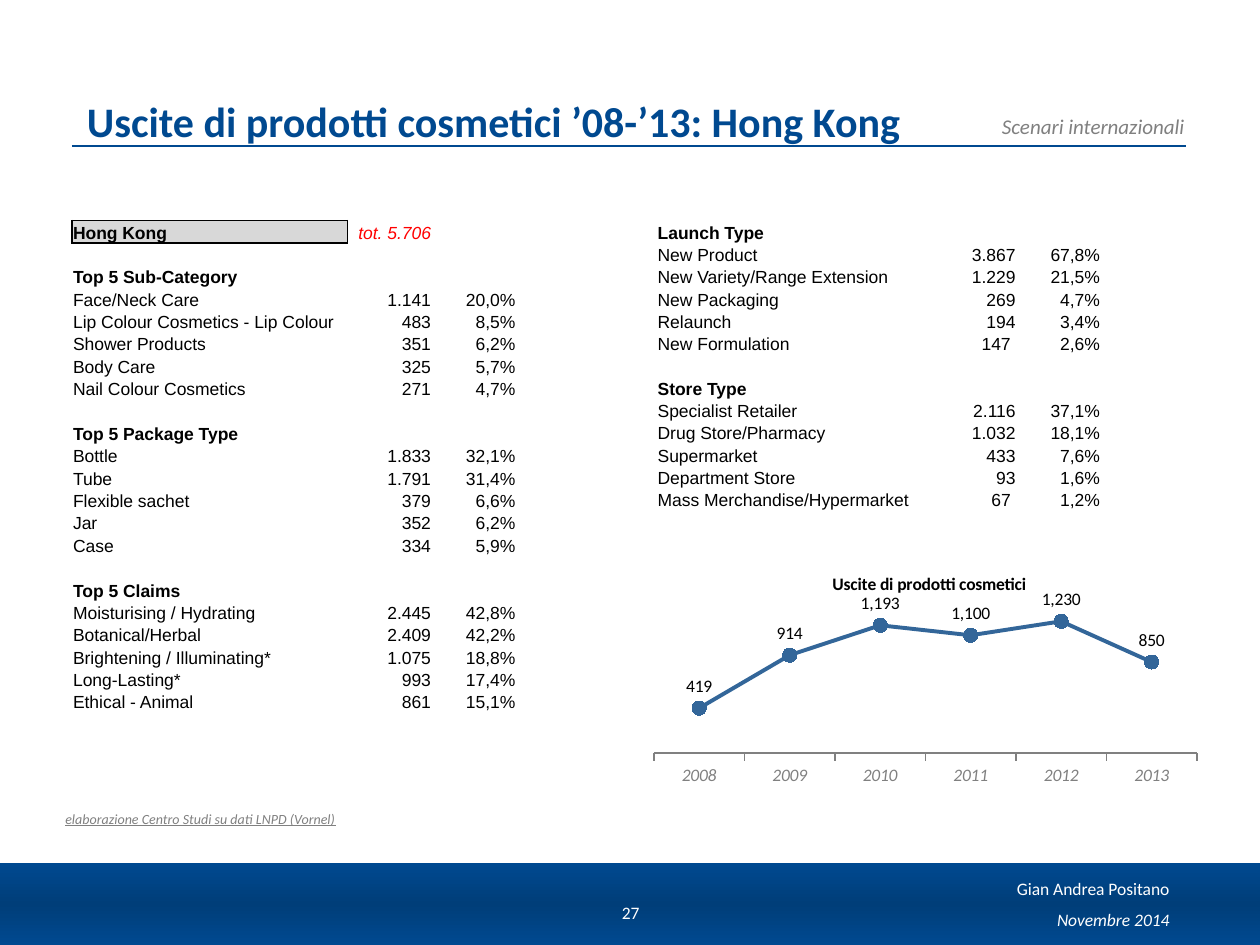
"""Build the Hong Kong cosmetics launches slide."""
from copy import deepcopy
from dataclasses import dataclass

from lxml import etree
from pptx import Presentation
from pptx.chart.data import CategoryChartData
from pptx.dml.color import RGBColor
from pptx.enum.chart import XL_CHART_TYPE, XL_LABEL_POSITION, XL_MARKER_STYLE, XL_TICK_MARK
from pptx.enum.shapes import MSO_CONNECTOR, MSO_SHAPE
from pptx.enum.text import MSO_ANCHOR, MSO_AUTO_SIZE, PP_ALIGN
from pptx.oxml.ns import qn
from pptx.util import Inches, Pt

LEFT, CENTER, RIGHT = PP_ALIGN.LEFT, PP_ALIGN.CENTER, PP_ALIGN.RIGHT
TOP, MIDDLE, BOTTOM = MSO_ANCHOR.TOP, MSO_ANCHOR.MIDDLE, MSO_ANCHOR.BOTTOM
LINE_CHART = XL_CHART_TYPE.LINE_MARKERS_STACKED
ABOVE, CIRCLE, OUTSIDE = XL_LABEL_POSITION.ABOVE, XL_MARKER_STYLE.CIRCLE, XL_TICK_MARK.OUTSIDE
NO_STYLE = "{2D5ABB26-0587-4C30-8999-92F81FD0307C}"


@dataclass(frozen=True)
class Theme:
    """Fonts, colours and type sizes."""
    font: str = "Calibri"
    table_font: str = "Arial"
    blue: str = "004990"
    deep_blue: str = "003E79"
    series: str = "336699"
    grey: str = "808080"
    cell: str = "D8D8D8"
    red: str = "FF0000"
    black: str = "000000"
    white: str = "FFFFFF"
    title: int = 24
    tag: int = 12
    body: int = 10
    note: int = 8


@dataclass(frozen=True)
class Section:
    """A headed group of table rows."""
    heading: str
    rows: tuple


T = Theme()
COLUMNS = (2.19, 0.67, 0.67)
LEFT_SECTIONS = (
    Section("Top 5 Sub-Category", (
        ("Face/Neck Care", "1.141", "20,0%"),
        ("Lip Colour Cosmetics - Lip Colour", "483", "8,5%"),
        ("Shower Products", "351", "6,2%"),
        ("Body Care", "325", "5,7%"),
        ("Nail Colour Cosmetics", "271", "4,7%"))),
    Section("Top 5 Package Type", (
        ("Bottle", "1.833", "32,1%"),
        ("Tube", "1.791", "31,4%"),
        ("Flexible sachet", "379", "6,6%"),
        ("Jar", "352", "6,2%"),
        ("Case", "334", "5,9%"))),
    Section("Top 5 Claims", (
        ("Moisturising / Hydrating", "2.445", "42,8%"),
        ("Botanical/Herbal", "2.409", "42,2%"),
        ("Brightening / Illuminating*", "1.075", "18,8%"),
        ("Long-Lasting*", "993", "17,4%"),
        ("Ethical - Animal", "861", "15,1%"))),
)
RIGHT_SECTIONS = (
    Section("Launch Type", (
        ("New Product", "3.867", "67,8%"),
        ("New Variety/Range Extension", "1.229", "21,5%"),
        ("New Packaging", "269", "4,7%"),
        ("Relaunch", "194", "3,4%"),
        ("New Formulation", "147 ", "2,6%"))),
    Section("Store Type", (
        ("Specialist Retailer", "2.116", "37,1%"),
        ("Drug Store/Pharmacy", "1.032", "18,1%"),
        ("Supermarket", "433", "7,6%"),
        ("Department Store", "93", "1,6%"),
        ("Mass Merchandise/Hypermarket", "67 ", "1,2%"))),
)


def rgb(color: str) -> RGBColor:
    """Turn a hex string into a colour."""
    return RGBColor.from_string(color)


def style(font, size=T.body, color=T.black, name=T.font, bold=False, italic=False, underline=False):
    """Format a font."""
    font.name, font.size, font.color.rgb = name, Pt(size), rgb(color)
    font.bold, font.italic, font.underline = bold, italic, underline


def write(tf, text: str, align=LEFT, spacing=None, **fmt) -> None:
    """Write one formatted paragraph into a text frame."""
    p = tf.paragraphs[0]
    p.alignment = align
    if spacing:
        p.line_spacing = spacing
    r = p.add_run()
    r.text = text
    style(r.font, **fmt)


def add_text(s, text: str, box: tuple, anchor=TOP, **fmt) -> None:
    """Add a wrapped text box."""
    tf = s.shapes.add_textbox(*map(Inches, box)).text_frame
    tf.word_wrap, tf.vertical_anchor = True, anchor
    write(tf, text, **fmt)


def add_frame(s) -> None:
    """Draw the title rule and the footer band."""
    rule = s.shapes.add_connector(MSO_CONNECTOR.STRAIGHT, *map(Inches, (0.57, 1.16, 9.41, 1.16)))
    rule.line.color.rgb, rule.line.width = rgb(T.blue), Pt(0.75)
    etree.SubElement(rule._element.spPr, qn("a:effectLst"))
    band = s.shapes.add_shape(MSO_SHAPE.RECTANGLE, *map(Inches, (-0.19, 6.85, 10.3, 0.65)))
    band.shadow.inherit = False
    band.line.fill.background()
    band.fill.gradient()
    band.fill.gradient_angle = 90
    stops = band._element.spPr.find(qn("a:gradFill")).find(qn("a:gsLst"))
    stops.insert(1, deepcopy(stops[0]))
    for stop, pos, color in zip(band.fill.gradient_stops, (0, 0.5, 1), (T.blue, T.deep_blue, T.blue)):
        stop.position, stop.color.rgb = pos, rgb(color)


def section_rows(sections: tuple) -> list:
    """List the table rows, with an empty row between sections."""
    rows = []
    for section in sections:
        rows += [("", "", "")] if rows else []
        rows += [(section.heading, "", ""), *section.rows]
    return rows


def add_border(cell, sides: str) -> None:
    """Draw a black line on the given sides of a cell."""
    for side in sides:
        ln = etree.SubElement(cell._tc.get_or_add_tcPr(), qn(f"a:ln{side}"), w=str(Pt(1)))
        fill = etree.SubElement(ln, qn("a:solidFill"))
        etree.SubElement(fill, qn("a:srgbClr"), val=T.black)


def add_rows(s, rows: list, box: tuple):
    """Add a plain table with bold headings."""
    tbl = s.shapes.add_table(len(rows), len(COLUMNS), *map(Inches, box)).table
    tbl.first_row = tbl.horz_banding = False
    tbl._tbl.tblPr.find(qn("a:tableStyleId")).text = NO_STYLE
    for column, width in zip(tbl.columns, COLUMNS):
        column.width = Inches(width)
    for i, row in enumerate(rows):
        tbl.rows[i].height = Inches(box[3] / len(rows))
        for j, text in enumerate(row):
            cell = tbl.cell(i, j)
            cell.margin_left = cell.margin_right = cell.margin_top = Inches(0.01)
            cell.margin_bottom, cell.vertical_anchor = 0, BOTTOM
            total = text.startswith("tot.")
            if text:
                write(cell.text_frame, text, align=RIGHT if j else LEFT, name=T.table_font,
                      bold=not j and not row[2], italic=total, color=T.red if total else T.black)
            else:
                etree.SubElement(cell.text_frame.paragraphs[0]._p, qn("a:endParaRPr"), sz=str(T.body * 100))
            if (i, text) == (0, "Hong Kong"):
                add_border(cell, "LRTB")
                cell.fill.solid()
                cell.fill.fore_color.rgb = rgb(T.cell)
            else:
                cell.fill.background()


def set_layout(parent, inner=False, **place: float) -> None:
    """Place a chart part by fractions of the chart area."""
    layout = parent.find(qn("c:layout"))
    if layout is None:
        layout = etree.Element(qn("c:layout"))
        parent.insert(0, layout)
    manual = etree.SubElement(layout, qn("c:manualLayout"))
    if inner:
        etree.SubElement(manual, qn("c:layoutTarget"), val="inner")
    for mode in ("xMode", "yMode"):
        etree.SubElement(manual, qn(f"c:{mode}"), val="edge")
    for key, value in place.items():
        etree.SubElement(manual, qn(f"c:{key}"), val=str(value))


def add_launch_chart(s) -> None:
    """Add the line chart of launches by year."""
    data = CategoryChartData(number_format="#,##0")
    data.categories = [str(year) for year in range(2008, 2014)]
    data.add_series("Series 1", (419, 914, 1193, 1100, 1230, 850))
    chart = s.shapes.add_chart(LINE_CHART, *map(Inches, (5.1, 4.39, 4.49, 1.89)), data).chart
    style(chart.font)
    chart.has_legend = False
    write(chart.chart_title.text_frame, "Uscite di prodotti cosmetici", align=CENTER, bold=True)
    chart.chart_title.include_in_layout = True
    set_layout(chart.chart_title._element, x=0.33, y=0.07)
    set_layout(chart._chartSpace.chart.plotArea, inner=True, x=0.02, y=0.21, w=0.96, h=0.63)
    years, values = chart.category_axis, chart.value_axis
    style(years.tick_labels.font, color=T.grey, italic=True)
    years.format.line.color.rgb, years.major_tick_mark = rgb(T.grey), OUTSIDE
    values.visible = values.has_major_gridlines = False
    values.minimum_scale, values.maximum_scale = 0, 1400
    plot = chart.plots[0]
    plot.vary_by_categories = False
    line = plot.series[0]
    line.smooth = False
    line.format.line.color.rgb, line.format.line.width = rgb(T.series), Pt(2.25)
    line.marker.style, line.marker.size = CIRCLE, 8
    line.marker.format.fill.solid()
    line.marker.format.fill.fore_color.rgb = rgb(T.series)
    line.marker.format.line.color.rgb = rgb(T.series)
    labels = line.data_labels
    labels.show_value, labels.position = True, ABOVE
    labels.number_format, labels.number_format_is_linked = "#,##0", False
    style(labels.font)


def main() -> None:
    """Build and save the slide."""
    prs = Presentation()
    prs.slide_width, prs.slide_height = Inches(10), Inches(7.5)
    s = prs.slides.add_slide(prs.slide_layouts[5])
    add_frame(s)
    title = s.shapes.title
    title.left, title.top, title.width, title.height = map(Inches, (0.59, 0.75, 7.99, 0.5))
    tf = title.text_frame
    tf.auto_size, tf.vertical_anchor = MSO_AUTO_SIZE.NONE, TOP
    write(tf, "Uscite di prodotti cosmetici ’08-’13: Hong Kong", spacing=0.9,
          size=T.title, color=T.blue, bold=True)
    add_text(s, "Scenari internazionali", (6.1, 0.85, 3.4, 0.3), align=RIGHT,
             size=T.tag, color=T.grey, italic=True)
    add_text(s, "Novembre 2014", (7.86, 7.19, 1.52, 0.21), MIDDLE, align=RIGHT, color=T.white, italic=True)
    add_text(s, "Gian Andrea Positano", (7.85, 6.94, 1.53, 0.31), align=RIGHT, spacing=0.9, color=T.white)
    add_text(s, "27", (4.72, 7.04, 0.57, 0.4), MIDDLE, align=CENTER, color=T.white)
    add_text(s, "elaborazione Centro Studi su dati LNPD (Vornel)", (0.42, 6.38, 2.57, 0.24),
             size=T.note, color=T.grey, italic=True, underline=True)
    add_launch_chart(s)
    total = [("Hong Kong", "tot. 5.706", ""), ("", "", "")]
    add_rows(s, total + section_rows(LEFT_SECTIONS), (0.57, 1.75, 3.53, 3.91))
    add_rows(s, section_rows(RIGHT_SECTIONS), (5.21, 1.75, 3.53, 2.3))
    prs.save("out.pptx")


if __name__ == "__main__":
    main()
